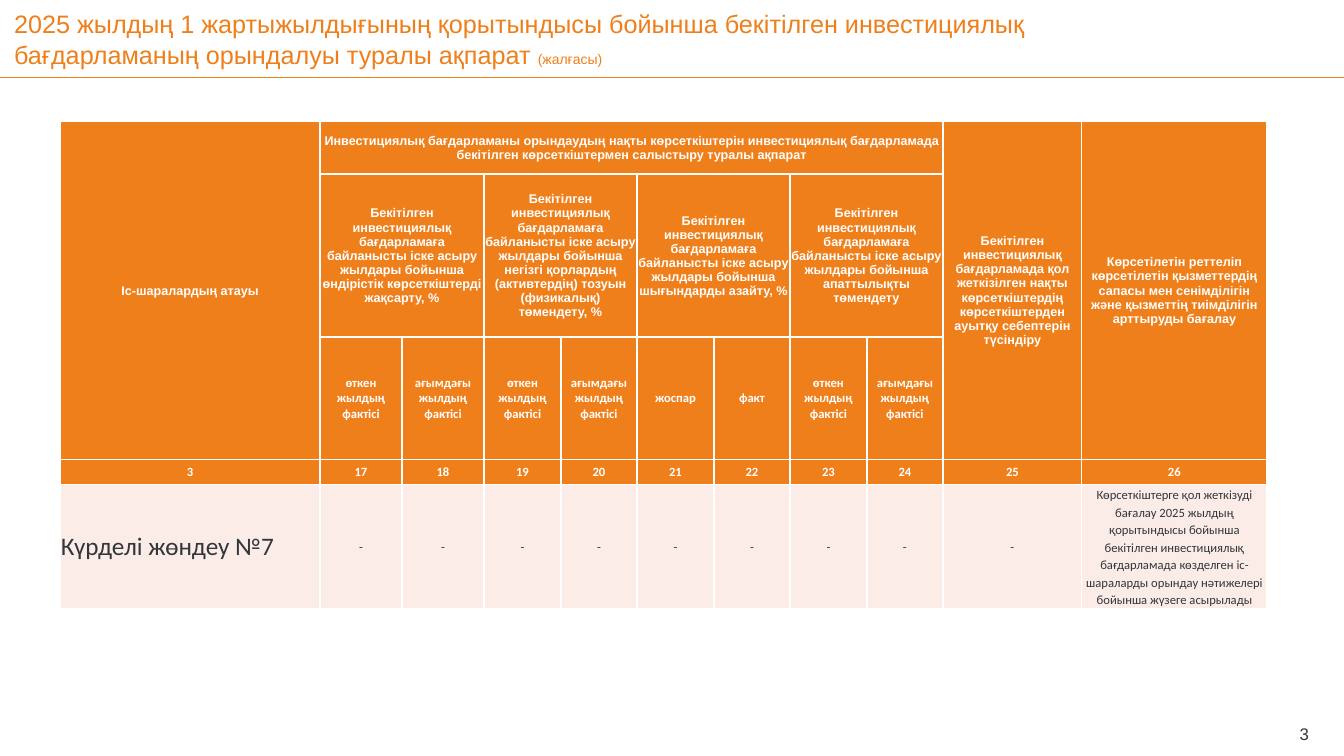
from dataclasses import dataclass
from itertools import product

from lxml.etree import SubElement
from pptx import Presentation
from pptx.dml.color import RGBColor
from pptx.enum.shapes import MSO_CONNECTOR
from pptx.enum.text import MSO_ANCHOR, MSO_AUTO_SIZE, PP_ALIGN
from pptx.oxml.ns import qn
from pptx.util import Emu, Pt


@dataclass(frozen=True)
class Theme:
    orange: str = "EF7F1A"
    white: str = "FFFFFF"
    ink: str = "32373C"
    blush: str = "FCECE8"
    heading: str = "Arial"
    body: str = "Calibri"
    title_size: int = 18
    note_size: int = 10
    number_size: int = 12
    cell_size: int = 9


theme = Theme()


def px(length):
    return Emu(round(length * 914400 / 100.8))


def add_run(paragraph, text, size, color, font, bold=False):
    run = paragraph.add_run()
    run.text = text
    run.font.size = Pt(size)
    run.font.name = font
    run.font.bold = bold
    run.font.color.rgb = RGBColor.from_string(color)


presentation = Presentation()
presentation.slide_width, presentation.slide_height = px(1344), px(756)
slide = presentation.slides.add_slide(presentation.slide_layouts[5])

# Title
title = slide.shapes.title
title.left, title.top, title.width, title.height = px(14), px(0), px(1166), px(78)
heading = title.text_frame
heading.auto_size = MSO_AUTO_SIZE.NONE
heading.word_wrap = True
heading.vertical_anchor = MSO_ANCHOR.MIDDLE
heading.margin_left = heading.margin_right = heading.margin_top = heading.margin_bottom = 0
heading.paragraphs[0].alignment = PP_ALIGN.LEFT
add_run(heading.paragraphs[0],
        "2025 жылдың 1 жартыжылдығының қорытындысы бойынша бекітілген инвестициялық "
        "бағдарламаның орындалуы туралы ақпарат ",
        theme.title_size, theme.orange, theme.heading)
add_run(heading.paragraphs[0], "(жалғасы)", theme.note_size, theme.orange, theme.heading)

rule = slide.shapes.add_connector(MSO_CONNECTOR.STRAIGHT, px(0), px(78), px(1344), px(78))
rule.line.color.rgb = RGBColor.from_string(theme.orange)
rule.line.width = Pt(0.75)
SubElement(rule._element.spPr, qn("a:effectLst"))

# Page number
page_number = slide.shapes.add_textbox(px(1259), px(721), px(50), px(25)).text_frame
page_number.word_wrap = True
page_number.vertical_anchor = MSO_ANCHOR.MIDDLE
page_number.margin_left = page_number.margin_right = 0
page_number.margin_top = page_number.margin_bottom = 0
page_number.paragraphs[0].alignment = PP_ALIGN.RIGHT
add_run(page_number.paragraphs[0], "3", theme.number_size, theme.ink, theme.heading)

# Table content, keyed by (row, column)
by_years = "Бекітілген инвестициялық бағдарламаға байланысты іске асыру жылдары бойынша "
indicators = [
    "өндірістік көрсеткіштерді жақсарту, %",
    "негізгі қорлардың (активтердің) тозуын (физикалық) төмендету, %",
    "шығындарды азайту, %",
    "апаттылықты төмендету",
]
past_and_current = ["өткен жылдың фактісі", "ағымдағы жылдың фактісі"]
measures = past_and_current * 2 + ["жоспар", "факт"] + past_and_current
column_numbers = ["3"] + [str(number) for number in range(17, 27)]
assessment = ("Көрсеткіштерге қол жеткізуді бағалау 2025 жылдың қорытындысы бойынша бекітілген "
              "инвестициялық бағдарламада көзделген іс-шараларды орындау нәтижелері бойынша "
              "жүзеге асырылады")
works = ["Күрделі жөндеу №7"] + ["-"] * 9 + [assessment]

wording = {
    (0, 0): "Іс-шаралардың атауы",
    (0, 1): "Инвестициялық бағдарламаны орындаудың нақты көрсеткіштерін инвестициялық "
            "бағдарламада бекітілген көрсеткіштермен салыстыру туралы ақпарат",
    (0, 9): "Бекітілген инвестициялық бағдарламада қол жеткізілген нақты көрсеткіштердің "
            "көрсеткіштерден ауытқу себептерін түсіндіру",
    (0, 10): "Көрсетілетін реттеліп көрсетілетін қызметтердің сапасы мен сенімділігін "
             "және қызметтің тиімділігін арттыруды бағалау",
}
wording |= {(1, 1 + 2 * i): by_years + text for i, text in enumerate(indicators)}
wording |= {(2, 1 + i): text for i, text in enumerate(measures)}
wording |= {(3, i): text for i, text in enumerate(column_numbers)}
wording |= {(4, i): text for i, text in enumerate(works)}

# Table
column_widths = [260, 82, 82] + [77, 76] * 3 + [139, 185]
row_heights = [53, 163, 114, 25, 124]
table = slide.shapes.add_table(
    len(row_heights), len(column_widths), px(60), px(121),
    px(sum(column_widths)), px(sum(row_heights))).table
table.first_row = table.horz_banding = False
for column, width in zip(table.columns, column_widths):
    column.width = px(width)
for row, height in zip(table.rows, row_heights):
    row.height = px(height)

for column in (0, 9, 10):
    table.cell(0, column).merge(table.cell(2, column))
table.cell(0, 1).merge(table.cell(0, 8))
for column in range(1, 9, 2):
    table.cell(1, column).merge(table.cell(1, column + 1))

for row, column in product(range(len(row_heights)), range(len(column_widths))):
    cell = table.cell(row, column)
    is_header = row < 4
    for side in ("a:lnL", "a:lnR", "a:lnT", "a:lnB"):
        border = SubElement(cell._tc.get_or_add_tcPr(), qn(side), w=str(Pt(1)))
        SubElement(SubElement(border, qn("a:solidFill")), qn("a:srgbClr"), val=theme.white)
    cell.fill.solid()
    cell.fill.fore_color.rgb = RGBColor.from_string(theme.orange if is_header else theme.blush)
    cell.vertical_anchor = MSO_ANCHOR.MIDDLE
    cell.margin_left = cell.margin_right = cell.margin_top = px(1)
    cell.margin_bottom = 0
    if (row, column) not in wording:
        continue
    is_work_name = (row, column) == (4, 0)
    paragraph = cell.text_frame.paragraphs[0]
    paragraph.alignment = PP_ALIGN.LEFT if is_work_name else PP_ALIGN.CENTER
    if wording[row, column] == assessment:
        paragraph.line_spacing = 1.15
    add_run(paragraph, wording[row, column],
            theme.title_size if is_work_name else theme.cell_size,
            theme.white if is_header else theme.ink,
            theme.heading if row < 2 else theme.body,
            is_header)

presentation.save("out.pptx")
